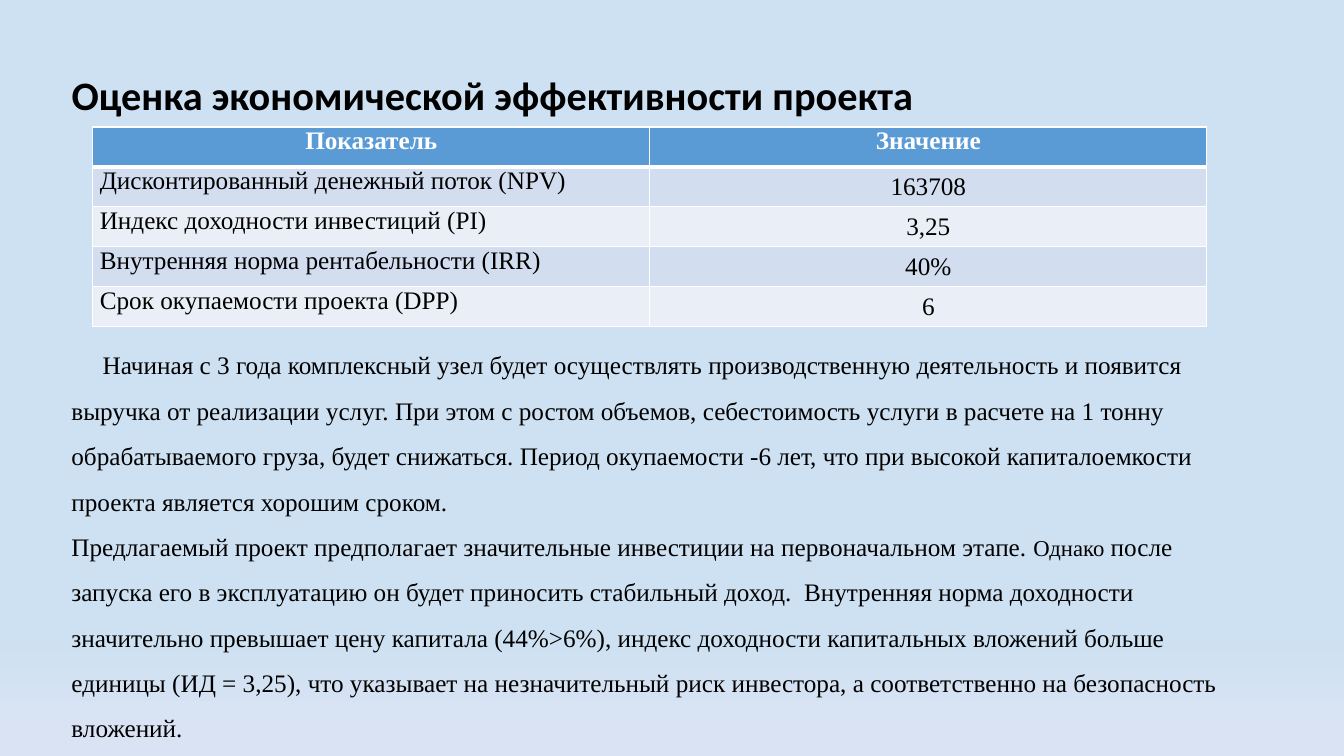
import dataclasses

import pptx
import pptx.dml.color
import pptx.enum.text
import pptx.oxml
import pptx.oxml.ns
import pptx.util
from pptx.util import Inches, Pt

HEADING = "Оценка экономической эффективности проекта"
INDICATORS = [
    ("Показатель", "Значение"),
    ("Дисконтированный денежный поток (NPV)", "163708"),
    ("Индекс доходности инвестиций (PI)", "3,25"),
    ("Внутренняя норма рентабельности (IRR)", "40%"),
    ("Срок окупаемости проекта (DPP)", "6"),
]
CONCLUSIONS = [
    ["Начиная с 3 года комплексный узел будет осуществлять производственную "
     "деятельность и появится выручка от реализации услуг. При этом с ростом "
     "объемов, себестоимость услуги в расчете на 1 тонну обрабатываемого груза, "
     "будет снижаться. Период окупаемости -6 лет, что при высокой капиталоемкости "
     "проекта является хорошим сроком."],
    ["Предлагаемый проект предполагает значительные инвестиции на первоначальном "
     "этапе. ",
     "Однако",
     " после запуска его в эксплуатацию он будет приносить стабильный доход.  "
     "Внутренняя норма доходности значительно превышает цену капитала (44%>6%), "
     "индекс доходности капитальных вложений больше единицы (ИД = 3,25), что "
     "указывает на незначительный риск инвестора, а соответственно на "
     "безопасность вложений."],
]


@dataclasses.dataclass(frozen=True)
class Theme:
    heading_font: str = "Calibri"
    body_font: str = "Times New Roman"
    heading_size: float = 28.8
    body_size: float = 18
    small_size: float = 16.2
    line_pitch: float = 32.4
    text: str = "000000"
    white: str = "FFFFFF"
    header: str = "5B9BD5"
    bands: tuple = ("D2DEEF", "EAEFF7")
    backdrop: tuple = ((0.84, "CEE1F2"), (0.97, "DAE3F3"))


THEME = Theme()
ALIGN = pptx.enum.text.PP_ALIGN
ANCHOR = pptx.enum.text.MSO_ANCHOR
LEFT, WIDTH = 0.61, 11.81


def rgb(value):
    return pptx.dml.color.RGBColor.from_string(value)


def style(span, font, size, color, bold=False):
    span.font.name = font
    span.font.size = Pt(size)
    span.font.bold = bold
    span.font.color.rgb = rgb(color)


def prepare_frame(frame):
    frame.word_wrap = True
    frame.auto_size = pptx.enum.text.MSO_AUTO_SIZE.NONE
    frame.vertical_anchor = ANCHOR.TOP
    frame.margin_left = frame.margin_right = Inches(0.1)
    frame.margin_top = frame.margin_bottom = 0


def add_backdrop(page):
    fill = page.background.fill
    fill.gradient()
    fill.gradient_angle = 270
    for stop, (position, color) in zip(fill.gradient_stops, THEME.backdrop):
        stop.position = position
        stop.color.rgb = rgb(color)


def add_heading(page):
    title = page.shapes.title
    title.left, title.top = Inches(LEFT), Inches(0.7)
    title.width, title.height = Inches(WIDTH), Inches(0.5)
    frame = title.text_frame
    prepare_frame(frame)
    frame.text = HEADING
    para = frame.paragraphs[0]
    para.alignment = ALIGN.LEFT
    para.line_spacing = 1.0
    style(para.runs[0], THEME.heading_font, THEME.heading_size, THEME.text, True)


def add_borders(cell, widths):
    properties = cell._tc.get_or_add_tcPr()
    for side, width in widths.items():
        properties.append(pptx.oxml.parse_xml(
            f'<a:ln{side} {pptx.oxml.ns.nsdecls("a")} w="{Pt(width)}"><a:solidFill>'
            f'<a:srgbClr val="{THEME.white}"/></a:solidFill></a:ln{side}>'))


def add_indicators(page):
    table = page.shapes.add_table(
        len(INDICATORS), 2, Inches(0.92), Inches(1.26), Inches(11.05), Inches(1.98)).table
    for row, values in enumerate(INDICATORS):
        is_header = row == 0
        for column, value in enumerate(values):
            cell = table.cell(row, column)
            cell.margin_left = cell.margin_right = Inches(0.07)
            cell.margin_top = cell.margin_bottom = 0
            centred = is_header or column == 1
            cell.vertical_anchor = ANCHOR.MIDDLE if column and not is_header else ANCHOR.TOP
            add_borders(cell, {"L": 1, "R": 1, "T": 3 if row == 1 else 1,
                               "B": 3 if is_header else 1})
            cell.fill.solid()
            cell.fill.fore_color.rgb = rgb(
                THEME.header if is_header else THEME.bands[(row - 1) % 2])
            cell.text_frame.text = value
            para = cell.text_frame.paragraphs[0]
            para.alignment = ALIGN.CENTER if centred else ALIGN.JUSTIFY
            style(para.runs[0], THEME.body_font, THEME.body_size,
                  THEME.white if is_header else THEME.text, is_header)


def add_conclusions(page):
    box = page.shapes.add_textbox(Inches(LEFT), Inches(3.32), Inches(WIDTH), Inches(4.1))
    frame = box.text_frame
    prepare_frame(frame)
    for index, parts in enumerate(CONCLUSIONS):
        para = frame.add_paragraph() if index else frame.paragraphs[0]
        para.line_spacing = Pt(THEME.line_pitch)
        if index == 0:
            para._p.get_or_add_pPr().set("indent", str(Inches(0.31)))
        for place, part in enumerate(parts):
            span = para.add_run()
            span.text = part
            size = THEME.small_size if place == 1 else THEME.body_size
            style(span, THEME.body_font, size, THEME.text)


def main():
    deck = pptx.Presentation()
    deck.slide_width, deck.slide_height = Inches(13.33), Inches(7.5)
    page = deck.slides.add_slide(deck.slide_layouts.get_by_name("Title Only"))
    add_backdrop(page)
    add_heading(page)
    add_indicators(page)
    add_conclusions(page)
    deck.save("out.pptx")


if __name__ == "__main__":
    main()
